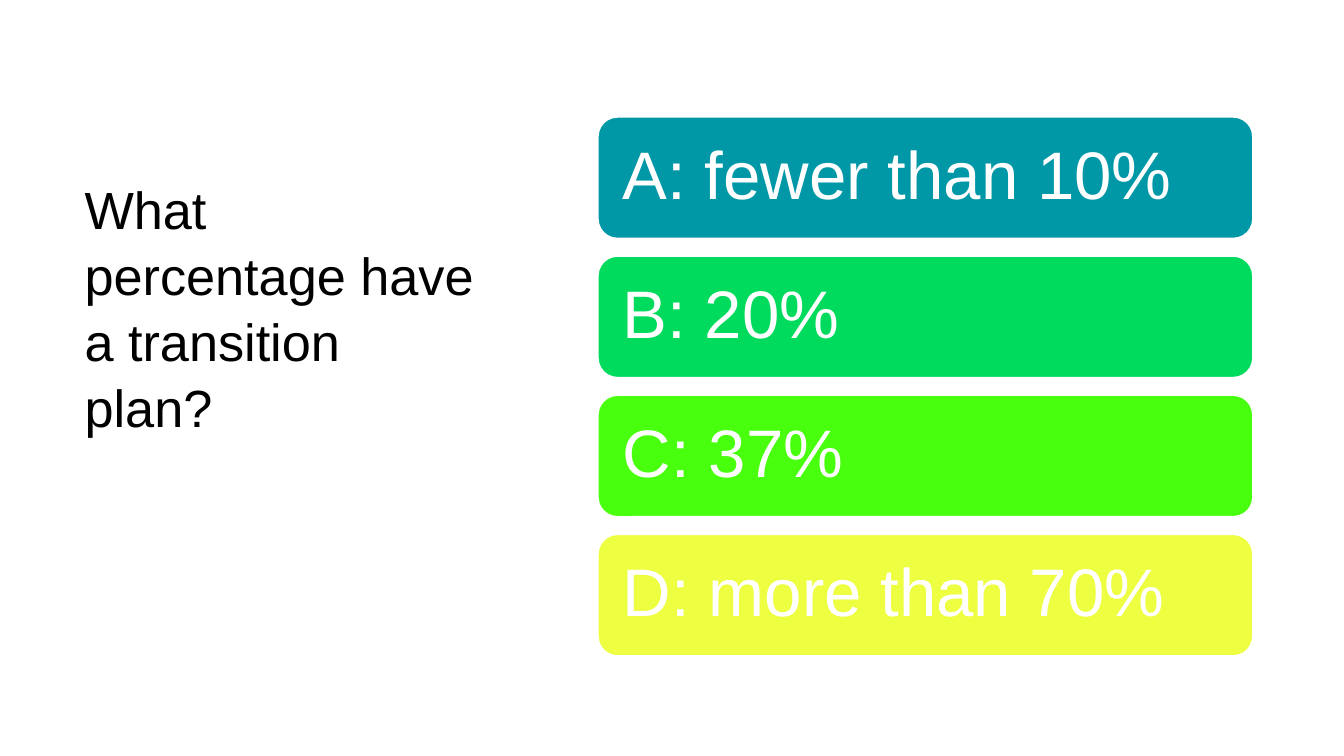
from dataclasses import dataclass

from pptx import Presentation
from pptx.dml.color import RGBColor
from pptx.enum.shapes import MSO_SHAPE
from pptx.enum.text import MSO_ANCHOR, PP_ALIGN
from pptx.util import Cm, Pt

QUESTION = "What percentage have a transition plan?"
ANSWERS = [
    ("A: fewer than 10%", "0097A7"),
    ("B: 20%", "00DA5D"),
    ("C: 37%", "48FF0E"),
    ("D: more than 70%", "EEFF41"),
]


@dataclass(frozen=True)
class Theme:
    font: str = "Arial"
    question_size: int = 28
    answer_size: int = 36
    question_color: str = "000000"
    light: str = "FFFFFF"


THEME = Theme()
ANSWER_LEFT, ANSWER_TOP = 11.28, 2.19
ANSWER_WIDTH, ANSWER_HEIGHT, ANSWER_GAP = 12.42, 2.34, 0.29


def write_text(shape, text, size, color, anchor, inset, line_spacing):
    """Fill a shape with one left-aligned paragraph."""
    frame = shape.text_frame
    frame.word_wrap = True
    frame.vertical_anchor = anchor
    frame.margin_left = frame.margin_right = Cm(inset)
    frame.margin_top = frame.margin_bottom = Cm(0.25)
    paragraph = frame.paragraphs[0]
    paragraph.alignment = PP_ALIGN.LEFT
    paragraph.line_spacing = line_spacing
    run = paragraph.add_run()
    run.text = text
    run.font.name = THEME.font
    run.font.size = Pt(size)
    run.font.color.rgb = RGBColor.from_string(color)


def add_answer(slide, index, text, fill):
    """Add one answer bar at its place in the column."""
    top = ANSWER_TOP + index * (ANSWER_HEIGHT + ANSWER_GAP)
    shape = slide.shapes.add_shape(
        MSO_SHAPE.ROUNDED_RECTANGLE,
        Cm(ANSWER_LEFT), Cm(top), Cm(ANSWER_WIDTH), Cm(ANSWER_HEIGHT),
    )
    shape.shadow.inherit = False
    shape.fill.solid()
    shape.fill.fore_color.rgb = RGBColor.from_string(fill)
    shape.line.color.rgb = RGBColor.from_string(THEME.light)
    shape.line.width = Pt(2)
    write_text(shape, text, THEME.answer_size, THEME.light, MSO_ANCHOR.MIDDLE, 0.38, 0.9)


def main():
    """Build the question slide and save it."""
    presentation = Presentation()
    presentation.slide_width, presentation.slide_height = Cm(25.4), Cm(14.29)
    slide = presentation.slides.add_slide(presentation.slide_layouts[6])
    question = slide.shapes.add_textbox(Cm(1.35), Cm(3.05), Cm(7.9), Cm(5.61))
    write_text(question, QUESTION, THEME.question_size, THEME.question_color,
               MSO_ANCHOR.TOP, 0.25, 1.05)
    for index, (text, fill) in enumerate(ANSWERS):
        add_answer(slide, index, text, fill)
    presentation.save("out.pptx")


if __name__ == "__main__":
    main()
